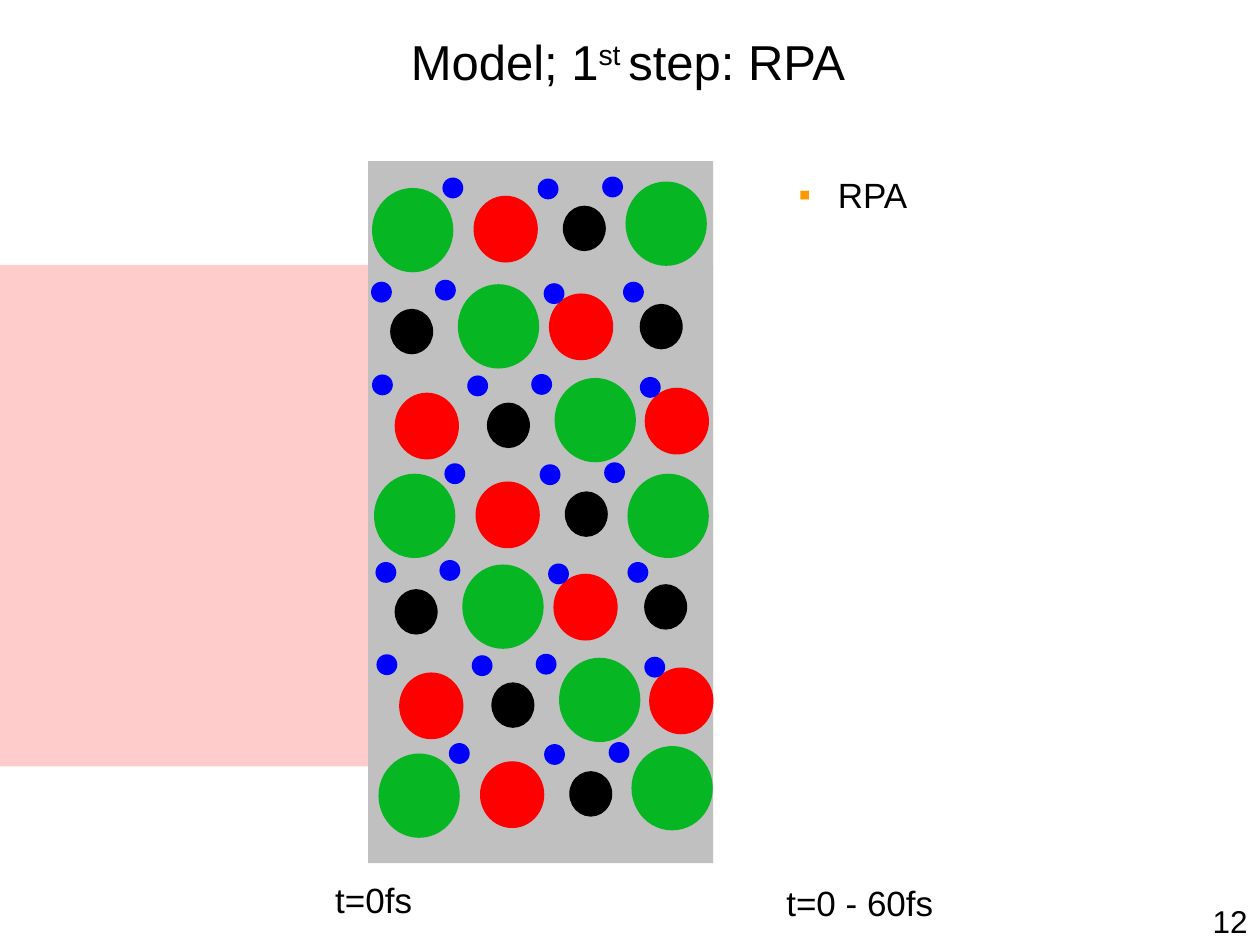
from dataclasses import dataclass

from lxml.etree import SubElement
from pptx import Presentation
from pptx.dml.color import RGBColor
from pptx.enum.shapes import MSO_SHAPE as Shape
from pptx.enum.text import MSO_ANCHOR as Anchor, PP_ALIGN as Align
from pptx.oxml.ns import qn
from pptx.util import Cm, Pt


@dataclass(frozen=True)
class Theme:
    font: str = "Arial"
    text: str = "000000"
    bullet: str = "FF9900"
    laser: str = "FFCCCC"
    foil: str = "C0C0C0"
    title_size: int = 28
    label_size: int = 20
    number_size: int = 18


@dataclass(frozen=True)
class Particle:
    width: float
    height: float
    colour: str
    outlined: bool = False


THEME = Theme()
HEAVY = Particle(1.64, 1.7, "06B623")
MEDIUM = Particle(1.27, 1.32, "FF0000", True)
LIGHT = Particle(0.84, 0.89, "000000", True)
ELECTRON = Particle(0.42, 0.42, "0000FF")

# Each layer lists particles with their offsets (cm) from the layer's origin.
LAYER_A = [
    (LIGHT, 3.86, 0.37), (MEDIUM, 2.06, 0.17), (ELECTRON, 1.42, -0.21),
    (HEAVY, 0, 0), (ELECTRON, 3.34, -0.19), (ELECTRON, 4.64, -0.23),
]
LAYER_B = [
    (LIGHT, 0.4, 0.56), (ELECTRON, 0, 0), (HEAVY, 1.75, 0.05),
    (ELECTRON, 1.29, -0.04), (MEDIUM, 3.6, 0.25), (ELECTRON, 3.48, 0.03),
    (LIGHT, 5.43, 0.46), (ELECTRON, 5.08, 0),
]
LAYER_C = [
    (LIGHT, 2.33, 0.58), (MEDIUM, 0.47, 0.38), (ELECTRON, 0, 0),
    (ELECTRON, 1.92, 0.02), (HEAVY, 3.68, 0.07), (ELECTRON, 3.21, -0.01),
    (MEDIUM, 5.51, 0.28), (ELECTRON, 5.4, 0.05),
]
LAYERS = [
    (LAYER_A + [(HEAVY, 5.11, -0.13)], 7.5, 3.79),
    (LAYER_B, 7.48, 5.68),
    (LAYER_C, 7.5, 7.55),
    (LAYER_A + [(HEAVY, 5.11, 0)], 7.54, 9.55),
    (LAYER_B, 7.57, 11.33),
    (LAYER_C, 7.59, 13.19),
    (LAYER_A + [(HEAVY, 5.1, -0.15)], 7.63, 15.19),
]


def add_solid(page, kind, left, top, width, height, colour, outlined=False):
    solid = page.shapes.add_shape(kind, Cm(left), Cm(top), Cm(width), Cm(height))
    solid.shadow.inherit = False
    solid.fill.solid()
    solid.fill.fore_color.rgb = RGBColor.from_string(colour)
    if outlined:
        solid.line.color.rgb = RGBColor.from_string(colour)
        solid.line.width = Pt(0.75)
    else:
        solid.line.fill.background()


def add_layer(page, particles, left, top):
    for particle, across, down in particles:
        add_solid(page, Shape.OVAL, left + across, top + down, particle.width,
                  particle.height, particle.colour, particle.outlined)


def add_bullet(para, char, colour, indent):
    props = para._p.get_or_add_pPr()
    props.set("marL", str(Cm(indent)))
    props.set("indent", str(-Cm(indent)))
    bullet_colour = SubElement(props, qn("a:buClr"))
    SubElement(bullet_colour, qn("a:srgbClr")).set("val", colour)
    SubElement(props, qn("a:buFont")).set("typeface", THEME.font)
    SubElement(props, qn("a:buChar")).set("char", char)


def add_span(para, text, size, baseline=0):
    """Add a run; baseline is its rise in percent."""
    span = para.add_run()
    span.text = text
    span.font.name = THEME.font
    span.font.size = Pt(size)
    span.font.color.rgb = RGBColor.from_string(THEME.text)
    if baseline:
        span._r.get_or_add_rPr().set("baseline", str(baseline * 1000))


def add_text_box(page, left, top, width, height, align, anchor=Anchor.TOP):
    """Add an empty text box and return its first paragraph."""
    box = page.shapes.add_textbox(Cm(left), Cm(top), Cm(width), Cm(height))
    frame = box.text_frame
    frame.word_wrap = True
    frame.vertical_anchor = anchor
    para = frame.paragraphs[0]
    para.alignment = align
    return para


def add_title(page):
    para = add_text_box(page, -0.08, 0, 25.48, 2.44, Align.CENTER, Anchor.MIDDLE)
    add_span(para, "Model; 1", THEME.title_size)
    add_span(para, "st ", THEME.title_size, baseline=30)
    add_span(para, "step: RPA", THEME.title_size)


def add_label(page, text, left, top):
    para = add_text_box(page, left, top, 4.09, 1.12, Align.CENTER)
    add_span(para, text, THEME.label_size)


def main():
    deck = Presentation()
    deck.slide_width, deck.slide_height = Cm(25.4), Cm(19.05)
    page = deck.slides.add_slide(deck.slide_layouts[6])

    add_solid(page, Shape.RECTANGLE, 0, 5.34, 14.38, 10.11, THEME.laser)
    for top, height in ((15.46, 1.94), (5.35, 10.11), (3.25, 2.16)):
        add_solid(page, Shape.RECTANGLE, 7.42, top, 6.96, height, THEME.foil)
    for particles, left, top in LAYERS:
        add_layer(page, particles, left, top)

    add_label(page, "t=0fs", 5.49, 17.58)
    add_label(page, "t=0 - 60fs", 15.29, 17.65)
    step = add_text_box(page, 15.85, 3.38, 5.92, 1.12, Align.LEFT)
    add_bullet(step, "▪", THEME.bullet, 0.79)
    add_span(step, "RPA", THEME.label_size)
    number = add_text_box(page, 23.85, 18.06, 1.55, 1.02, Align.RIGHT)
    add_span(number, "12", THEME.number_size)
    add_title(page)

    deck.save("out.pptx")


if __name__ == "__main__":
    main()
